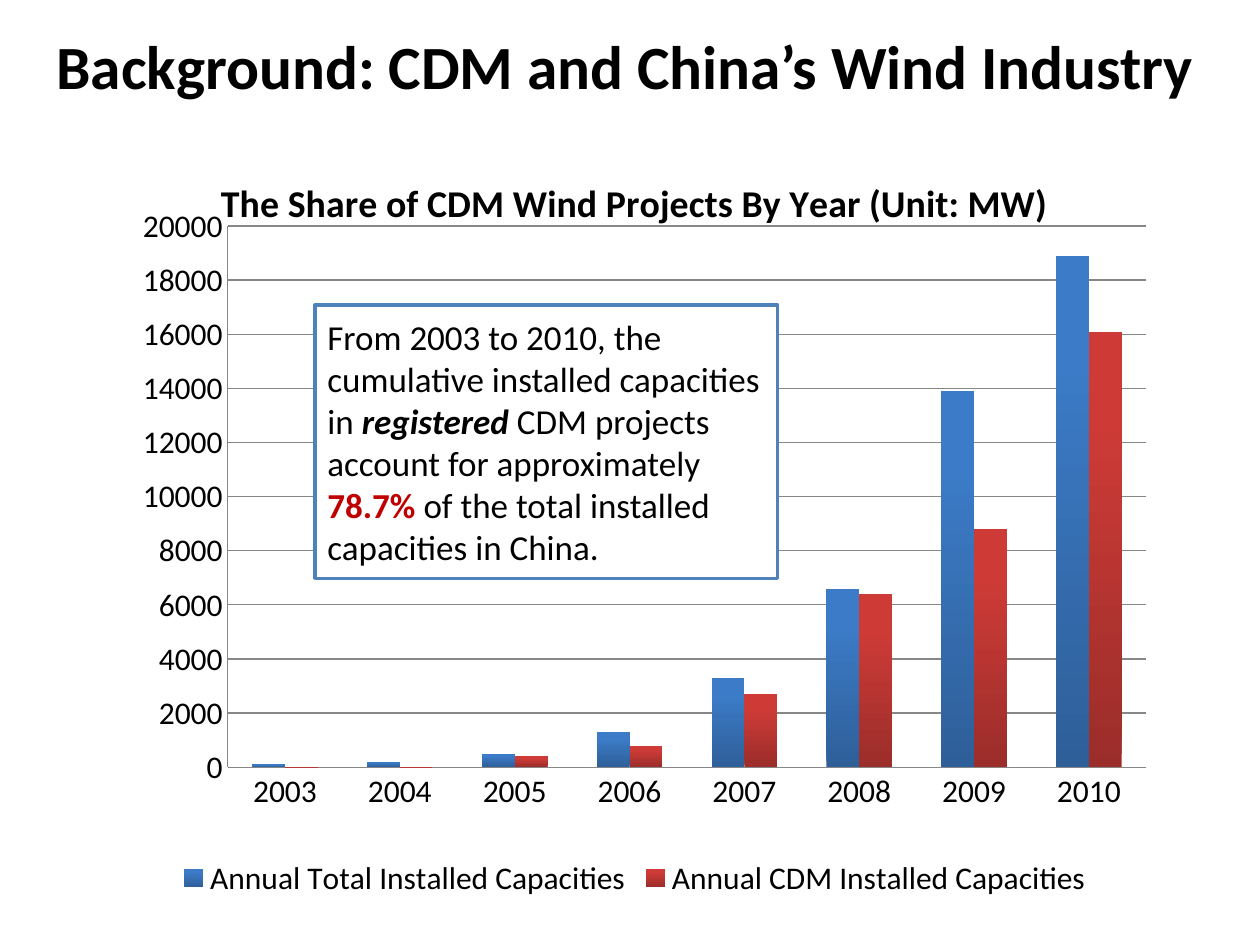
"""Build a slide on CDM projects and China's wind industry."""
from lxml import etree
from pptx import Presentation
from pptx.chart.data import CategoryChartData
from pptx.dml.color import RGBColor
from pptx.enum.chart import XL_CHART_TYPE, XL_LEGEND_POSITION, XL_TICK_MARK
from pptx.enum.shapes import MSO_SHAPE
from pptx.enum.text import MSO_ANCHOR, PP_ALIGN
from pptx.oxml.ns import qn
from pptx.util import Inches, Pt

COLUMNS = XL_CHART_TYPE.COLUMN_CLUSTERED
LEGEND_BOTTOM = XL_LEGEND_POSITION.BOTTOM
NO_TICK = XL_TICK_MARK.NONE
CALLOUT = MSO_SHAPE.LINE_CALLOUT_1
TOP, MIDDLE = MSO_ANCHOR.TOP, MSO_ANCHOR.MIDDLE
LEFT, CENTER = PP_ALIGN.LEFT, PP_ALIGN.CENTER


def color(value):
    return RGBColor.from_string(value)


prs = Presentation()
prs.slide_width, prs.slide_height = Inches(10), Inches(7.5)
slide = prs.slides.add_slide(prs.slide_layouts[6])

capacities = CategoryChartData()
capacities.categories = [str(year) for year in range(2003, 2011)]
capacities.add_series("Annual Total Installed Capacities",
                      [100, 200, 500, 1300, 3300, 6600, 13900, 18900])
capacities.add_series("Annual CDM Installed Capacities",
                      [0, 0, 400, 800, 2700, 6400, 8800, 16100])
chart = slide.shapes.add_chart(COLUMNS, Inches(0.83), Inches(1.17),
                               Inches(8.42), Inches(6), capacities).chart
chart.font.name = "Calibri"
chart.font.size = Pt(18)
chart.font.color.rgb = color("000000")

chart.has_title = True
chart_title = chart.chart_title.text_frame.paragraphs[0]
chart_title.text = "The Share of CDM Wind Projects By Year (Unit: MW)"
chart_title.font.name = "Calibri"
chart_title.font.size = Pt(21.6)
chart_title.font.bold = True
chart_title.font.color.rgb = color("000000")

chart.has_legend = True
chart.legend.position = LEGEND_BOTTOM
chart.legend.include_in_layout = False

plot = chart.plots[0]
plot.gap_width = 150
plot.overlap = 0
plot.vary_by_categories = False

plot_area = plot._element.getparent()
for automatic in plot_area.findall(qn("c:layout")):
    plot_area.remove(automatic)
layout = etree.Element(qn("c:layout"))
plot_area.insert(0, layout)
manual = etree.SubElement(layout, qn("c:manualLayout"))
for tag, value in (("layoutTarget", "inner"), ("xMode", "edge"), ("yMode", "edge"),
                   ("x", "0.116"), ("y", "0.104"), ("w", "0.866"), ("h", "0.716")):
    etree.SubElement(manual, qn(f"c:{tag}")).set("val", value)

shades = [("2E5F99", "3C7BC7"), ("9B2D2A", "CE3B37")]
for series, stops in zip(plot.series, shades):
    fill = series.format.fill
    fill.gradient()
    fill.gradient_angle = 90
    for stop, shade, position in zip(fill.gradient_stops, stops, (0, 0.8)):
        stop.color.rgb = color(shade)
        stop.position = position
    series.format.line.fill.background()

capacity_axis = chart.value_axis
capacity_axis.minimum_scale = 0
capacity_axis.maximum_scale = 20000
capacity_axis.major_unit = 2000
capacity_axis.has_major_gridlines = True
for axis in (chart.category_axis, capacity_axis):
    axis.major_tick_mark = axis.minor_tick_mark = NO_TICK
for line in (chart.category_axis.format.line, capacity_axis.format.line,
             capacity_axis.major_gridlines.format.line):
    line.color.rgb = color("878787")
    line.width = Pt(0.75)

callout = slide.shapes.add_shape(CALLOUT, Inches(2.5), Inches(2.42),
                                 Inches(3.67), Inches(2.17))
for index, value in enumerate((0.03, 0, 0, 0)):
    callout.adjustments[index] = value
callout.shadow.inherit = False
callout.fill.solid()
callout.fill.fore_color.rgb = color("FFFFFF")
callout.line.color.rgb = color("4F81BD")
callout.line.width = Pt(2)
callout.text_frame.word_wrap = True
callout.text_frame.vertical_anchor = MIDDLE
finding = callout.text_frame.paragraphs[0]
finding.alignment = LEFT
finding.font.name = "Calibri"
finding.font.size = Pt(20)
for text, bold, italic, shade in (
    ("From 2003 to 2010, the cumulative installed capacities in ", False, False, "000000"),
    ("registered", True, True, "000000"),
    (" CDM projects account for approximately ", False, False, "000000"),
    ("78.7% ", True, False, "C00000"),
    ("of the total installed capacities in China.", False, False, "000000"),
):
    run = finding.add_run()
    run.text = text
    run.font.bold, run.font.italic = bold, italic
    run.font.color.rgb = color(shade)

heading_box = slide.shapes.add_textbox(Inches(0.25), Inches(0.17),
                                       Inches(9.42), Inches(0.75))
heading_box.text_frame.word_wrap = True
heading_box.text_frame.vertical_anchor = TOP
heading = heading_box.text_frame.paragraphs[0]
heading.text = "Background: CDM and China’s Wind Industry"
heading.alignment = CENTER
heading.font.name = "Calibri"
heading.font.size = Pt(35.1)
heading.font.bold = True
heading.font.color.rgb = color("000000")

prs.save("out.pptx")
